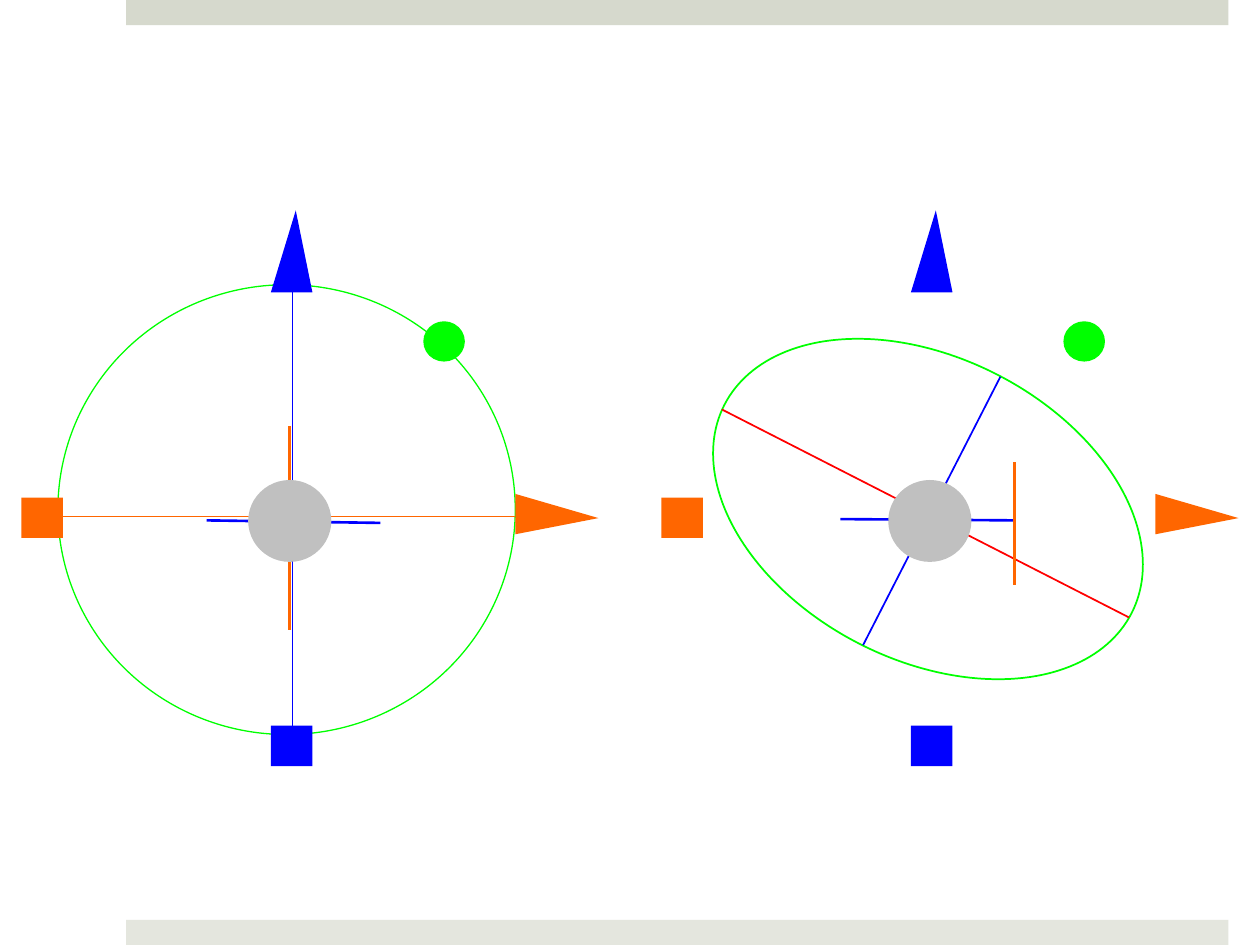
"""Build a slide with a circle and a tilted ellipse, each with axes and markers."""
from lxml import etree
from pptx import Presentation
from pptx import util as u
from pptx.dml.color import RGBColor
from pptx.enum import shapes as kinds
from pptx.oxml.ns import qn

THEME = {
    "top": "D6D9CD", "base": "E4E6DE", "green": "00FF00", "orange": "FF6600",
    "blue": "0000FF", "red": "FF0000", "gray": "C0C0C0",
}
Kind = kinds.MSO_SHAPE


def add_form(parent, kind, box, fill=None, line=None, width=1, turn=0):
    form = parent.add_shape(kind, *map(u.Inches, box))
    form.shadow.inherit = False
    for name, value in {"rotation": turn}.items():
        setattr(form, name, value)
    if fill:
        form.fill.solid()
        form.fill.fore_color.rgb = RGBColor.from_string(THEME[fill])
    else:
        form.fill.background()
    if line:
        form.line.color.rgb = RGBColor.from_string(THEME[line])
        form.line.width = u.Pt(width)
    else:
        form.line.fill.background()
    if kind == Kind.ISOSCELES_TRIANGLE:
        form.adjustments[0] = 0.6


def add_line(parent, ends, color, width):
    line = parent.add_connector(kinds.MSO_CONNECTOR.STRAIGHT, *map(u.Inches, ends))
    line.line.color.rgb = RGBColor.from_string(THEME[color])
    line.line.width = u.Pt(width)
    etree.SubElement(line._element.spPr, qn("a:effectLst"))


deck = Presentation()
for name, value in {"slide_width": 10, "slide_height": 7.5}.items():
    setattr(deck, name, u.Inches(value))
slide = deck.slides.add_slide(deck.slide_layouts[6])

for top, color in ((0, "top"), (7.3, "base")):
    add_form(slide.shapes, Kind.RECTANGLE, (1, top, 8.75, 0.2), color)

views = (
    {
        "shift": 0, "ring": (0.46, 2.26, 3.63, 3.57), "turn": 0, "width": 0.75,
        "lines": (
            ((0.46, 4.1, 4.09, 4.1), "orange", 0.75),
            ((2.32, 2.26, 2.32, 5.83), "blue", 0.75),
            ((3.02, 4.15, 1.64, 4.13), "blue", 1.5),
            ((2.3, 3.38, 2.3, 5), "orange", 1.5),
        ),
    },
    {
        "shift": 5.08, "ring": (5.55, 2.84, 3.63, 2.4), "turn": 27.1, "width": 1,
        "lines": (
            ((5.73, 3.25, 8.96, 4.9), "red", 1),
            ((7.94, 2.99, 6.85, 5.12), "blue", 1),
            ((8.05, 4.13, 6.67, 4.12), "blue", 1.5),
            ((8.05, 3.67, 8.05, 4.64), "orange", 1.5),
        ),
    },
)
marks = (
    (Kind.RECTANGLE, (2.15, 5.76, 0.33, 0.32), "blue", 0),
    (Kind.RECTANGLE, (0.17, 3.95, 0.33, 0.32), "orange", 0),
    (Kind.OVAL, (1.97, 3.81, 0.66, 0.65), "gray", 0),
    (Kind.OVAL, (3.36, 2.55, 0.33, 0.32), "green", 0),
    (Kind.ISOSCELES_TRIANGLE, (2.15, 1.67, 0.33, 0.65), "blue", 0),
    (Kind.ISOSCELES_TRIANGLE, (4.26, 3.75, 0.32, 0.66), "orange", 90),
)

for view in views:
    group = slide.shapes.add_group_shape().shapes
    add_form(group, Kind.OVAL, view["ring"], line="green",
             width=view["width"], turn=view["turn"])
    for ends, color, width in view["lines"]:
        add_line(group, ends, color, width)
    for kind, (left, *rest), color, turn in marks:
        add_form(group, kind, (left + view["shift"], *rest), color, turn=turn)

deck.save("out.pptx")
